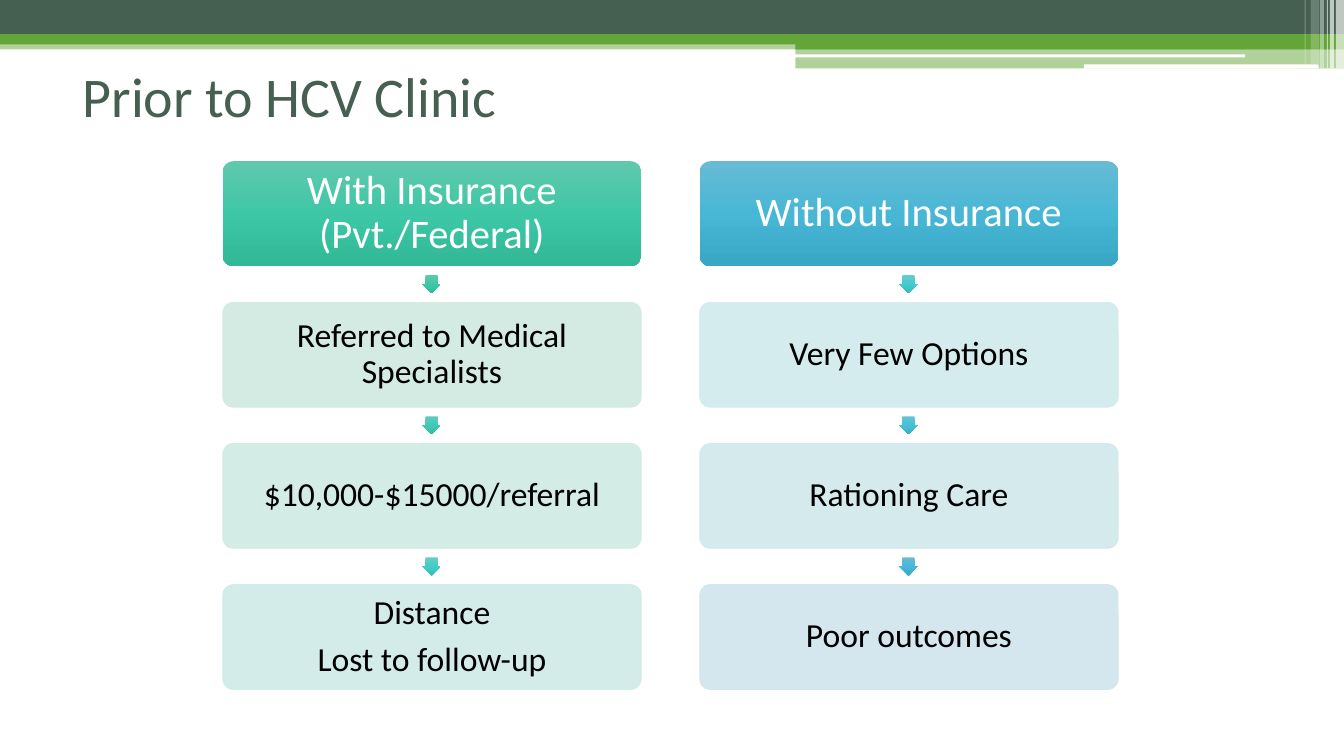
from copy import deepcopy
from dataclasses import dataclass

from lxml import etree
from pptx import Presentation
from pptx.dml.color import RGBColor
from pptx.enum.shapes import MSO_SHAPE
from pptx.enum.text import MSO_ANCHOR, PP_ALIGN
from pptx.oxml.ns import qn
from pptx.util import Emu, Pt

RECT = MSO_SHAPE.RECTANGLE
ROUND = MSO_SHAPE.ROUNDED_RECTANGLE
ARROW = MSO_SHAPE.RIGHT_ARROW
LEFT = PP_ALIGN.LEFT
CENTER = PP_ALIGN.CENTER
MIDDLE = MSO_ANCHOR.MIDDLE
EMU_PER_PX = 9144


@dataclass(frozen=True)
class Theme:
    font: str = "Calibri"
    dark: str = "455F51"
    green: str = "63A537"
    white: str = "FFFFFF"
    black: str = "000000"
    title_size: int = 40
    head_size: int = 29
    step_size: int = 24
    mint: tuple = ("61C8AD", "3EC7A6", "30B897")
    sea: tuple = ("62CBBA", "40CAB6", "31BBA6")
    teal: tuple = ("63CEC7", "41CDC5", "33BDB5")
    aqua: tuple = ("65CCD0", "43CBD0", "35BBC0")
    sky: tuple = ("66C4D3", "45C1D3", "36B1C3")
    blue: tuple = ("68BBD5", "48B7D5", "38A6C5")
    left_steps: tuple = ("CFE9E0", "CFEAE4", "CFEBE8")
    right_steps: tuple = ("D0EAEC", "D0E8EC", "D0E5ED")


THEME = Theme()


def px(n):
    return Emu(n * EMU_PER_PX)


def write(sp, text, size, color, align=CENTER, inset=None, line=None, after=None):
    tf = sp.text_frame
    tf.word_wrap = True
    tf.vertical_anchor = MIDDLE
    if inset is not None:
        tf.margin_left = tf.margin_right = tf.margin_top = tf.margin_bottom = px(inset)
    tf.text = text
    for p in tf.paragraphs:
        p.alignment = align
        p.line_spacing = line
        p.space_after = after
        for r in p.runs:
            r.font.name = THEME.font
            r.font.size = Pt(size)
            r.font.color.rgb = RGBColor.from_string(color)


def paint(fill, color, alpha=100):
    fill.solid()
    fill.fore_color.rgb = RGBColor.from_string(color)


def fade(sp, alpha):
    for clr in sp._element.spPr.iter(qn("a:srgbClr")):
        etree.SubElement(clr, qn("a:alpha")).set("val", str(alpha * 1000))


def shade(sp, colors):
    sp.fill.gradient()
    sp.fill.gradient_angle = 270
    grad = sp._element.spPr.find(qn("a:gradFill"))
    grad.set("rotWithShape", "0")
    stops = grad.find(qn("a:gsLst"))
    stops.append(deepcopy(stops[0]))
    for stop, color, pos in zip(sp.fill.gradient_stops, colors, (0, 0.5, 1)):
        stop.color.rgb = RGBColor.from_string(color)
        stop.position = pos


class Deck:
    def __init__(self, theme):
        self.theme = theme
        self.prs = Presentation()
        self.prs.slide_width, self.prs.slide_height = px(1333), px(750)
        self.s = self.prs.slides.add_slide(self.prs.slide_layouts[5])

    def title(self, text, x, y, w, h):
        sp = self.s.shapes.title
        sp.left, sp.top, sp.width, sp.height = map(px, (x, y, w, h))
        write(sp, text, self.theme.title_size, self.theme.dark, LEFT)

    def shape(self, kind, x, y, w, h):
        sp = self.s.shapes.add_shape(kind, px(x), px(y), px(w), px(h))
        sp.shadow.inherit = False
        sp.line.fill.background()
        return sp

    def bar(self, x, y, w, h, color, alpha=100, kind=RECT):
        sp = self.shape(kind, x, y, w, h)
        paint(sp.fill, color)
        if alpha < 100:
            fade(sp, alpha)

    def card(self, x, y, w, h):
        sp = self.shape(ROUND, x, y, w, h)
        sp.adjustments[0] = 0.1
        return sp

    def head(self, text, x, y, w, h, colors):
        sp = self.card(x, y, w, h)
        shade(sp, colors)
        write(sp, text, self.theme.head_size, self.theme.white,
              inset=7, line=0.9, after=Pt(10))

    def step(self, text, x, y, w, h, color):
        sp = self.card(x, y, w, h)
        paint(sp.fill, color)
        paint(sp.line.fill, color)
        sp.line.width = Pt(0.5)
        fade(sp, 90)
        write(sp, text, self.theme.step_size, self.theme.black,
              inset=6, line=0.9, after=Pt(8))

    def arrow(self, x, y, size, colors):
        sp = self.shape(ARROW, x, y, size, size)
        sp.rotation = 90
        sp.adjustments[0], sp.adjustments[1] = 0.667, 0.5
        shade(sp, colors)


def main():
    t = THEME
    deck = Deck(t)

    bars = [
        (0, 40, 1333, 9, t.green, 50),
        (0, 0, 1333, 34, t.dark),
        (0, 34, 1333, 10, t.green),
        (789, 39, 544, 10, t.green),
        (789, 48, 544, 20, t.green, 50),
        (788, 54, 447, 3, t.white, 100, ROUND),
        (1075, 64, 233, 4, t.white, 100, ROUND),
        (1325, 0, 8, 68, t.white, 65),
        (1319, 0, 4, 68, t.white, 65),
        (1316, 0, 1, 68, t.white, 60),
        (1309, 0, 4, 68, t.white, 40),
        (1300, 0, 8, 64, t.white, 20),
        (1294, 0, 1, 64, t.white, 30),
    ]
    for bar in bars:
        deck.bar(*bar)
    deck.title("Prior to HCV Clinic", 72, 22, 940, 144)

    top, pitch, card_w, card_h = 160, 140, 415, 104
    arrow_size, arrow_rise = 18, 27
    columns = [
        (221, "With Insurance (Pvt./Federal)", t.mint,
         ("Referred to Medical Specialists", "$10,000-$15000/referral",
          "Distance\nLost to follow-up"),
         t.left_steps, (t.mint, t.sea, t.teal)),
        (694, "Without Insurance", t.blue,
         ("Very Few Options", "Rationing Care", "Poor outcomes"),
         t.right_steps, (t.aqua, t.sky, t.blue)),
    ]
    for x, head, head_colors, steps, step_colors, arrow_colors in columns:
        deck.head(head, x, top, card_w, card_h, head_colors)
        arrow_x = x + (card_w - arrow_size) // 2
        rows = zip(steps, step_colors, arrow_colors)
        for i, (text, color, colors) in enumerate(rows, 1):
            y = top + i * pitch
            deck.arrow(arrow_x, y - arrow_rise, arrow_size, colors)
            deck.step(text, x, y, card_w, card_h, color)

    deck.prs.save("out.pptx")


if __name__ == "__main__":
    main()
